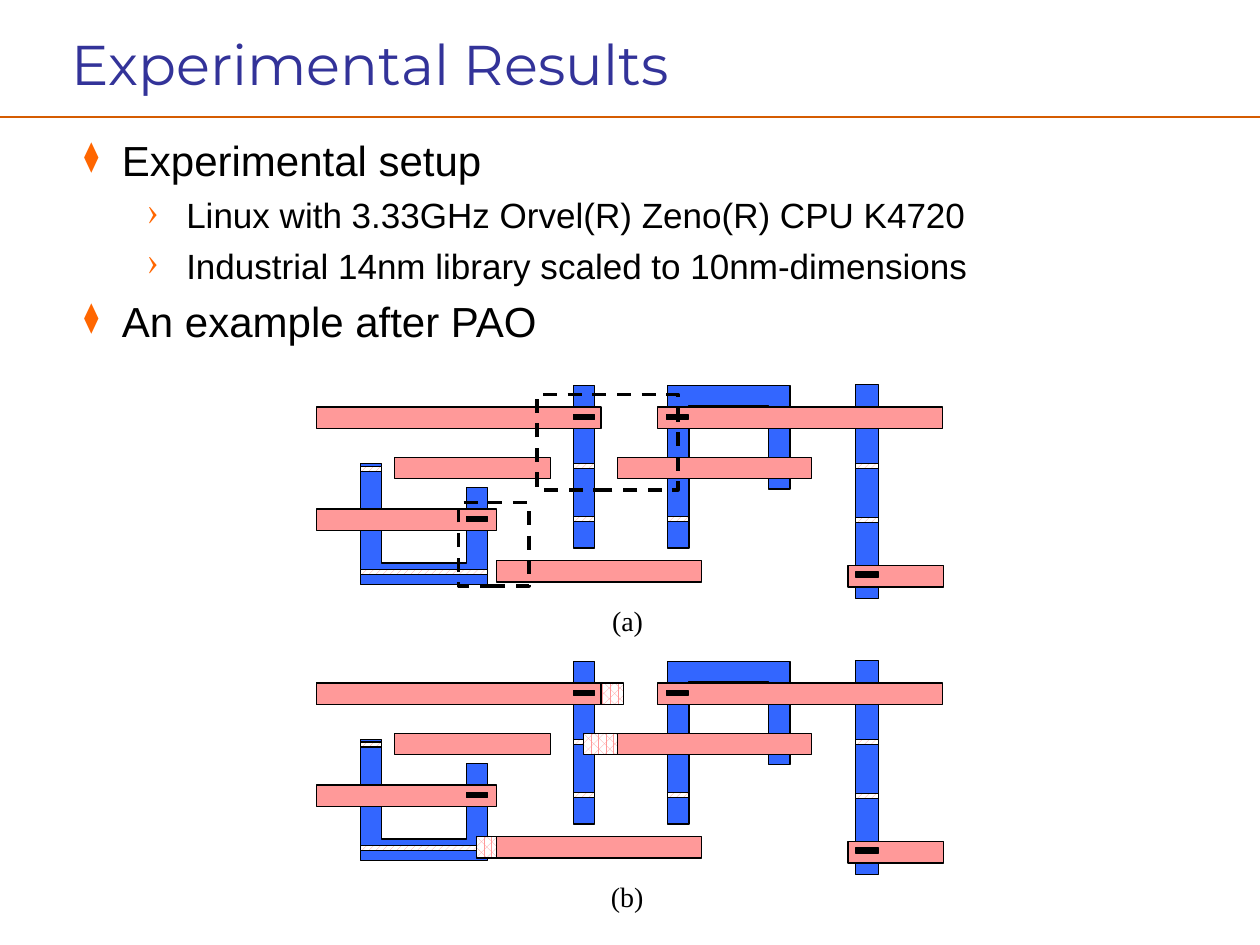
from dataclasses import dataclass

from lxml import etree
from pptx import Presentation
from pptx.dml.color import RGBColor
from pptx.enum.dml import MSO_LINE, MSO_PATTERN
from pptx.enum.shapes import MSO_CONNECTOR, MSO_SHAPE
from pptx.enum.text import MSO_ANCHOR, MSO_AUTO_SIZE
from pptx.oxml.ns import qn
from pptx.util import Inches, Pt

RECT = MSO_SHAPE.RECTANGLE
STRIPE = MSO_PATTERN.WIDE_UPWARD_DIAGONAL
DOTS = MSO_PATTERN.PERCENT_60
DASH = MSO_LINE.DASH
COLORS = {
    "title": "333399", "rule": "D55C01", "mark": "FF6600", "text": "000000",
    "wire": "3366FF", "bar": "FF9999", "pin": "000000", "back": "FFFFFF",
}


@dataclass
class Box:
    x: float
    y: float
    w: float
    h: float


@dataclass
class Item:
    text: str
    level: int = 0


@dataclass
class Style:
    size: int
    left: float
    hang: float
    mark: str
    scale: int


@dataclass
class Panel:
    label: str
    left: float
    drop: float
    grown: bool


STYLES = [Style(24, 0.43, 0.3, "⧫", 70), Style(20, 0.94, 0.31, "›", 100)]
ITEMS = [
    Item("Experimental setup"),
    Item("Linux with 3.33GHz Orvel(R) Zeno(R) CPU K4720", 1),
    Item("Industrial 14nm library scaled to 10nm-dimensions", 1),
    Item("An example after PAO"),
]
PANELS = [Panel("(a)", 4.76, 0, False), Panel("(b)", 4.75, 2.19, True)]

# Geometry of the first panel; the second one lies lower by its drop.
THICK, THIN = 0.17, 0.04
HOOK = [(5.3, 3.06), (6.27, 3.06), (6.27, 3.88), (6.1, 3.88),
        (6.1, 3.22), (5.47, 3.22), (5.47, 4.35), (5.3, 4.35)]
CUP = [(2.86, 3.68), (3.03, 3.68), (3.03, 4.47), (3.7, 4.47),
       (3.7, 3.87), (3.87, 3.87), (3.87, 4.64), (2.86, 4.64)]
POSTS = [Box(4.55, 3.06, THICK, 1.29), Box(6.79, 3.05, 0.18, 1.7)]
CUTS = [Box(x, y, w, THIN) for x, y, w in [
    (5.3, 4.1, THICK), (4.55, 3.68, THICK), (4.55, 4.1, THICK),
    (2.86, 4.52, 1.01), (2.86, 3.7, THICK), (6.79, 3.68, 0.18),
    (6.79, 4.11, 0.18)]]
GROWN = [Box(x, y, w, THICK) for x, y, w in [
    (3.78, 4.45, 1.78), (4.63, 3.63, 1.8), (2.51, 3.23, 2.44)]]
BARS = [Box(x, y, w, THICK) for x, y, w in [
    (2.51, 3.23, 2.26), (4.9, 3.63, 1.54), (3.13, 3.63, 1.24),
    (3.94, 4.45, 1.63), (5.22, 3.23, 2.26), (2.51, 4.04, 1.43),
    (6.73, 4.49, 0.76)]]
PINS = [Box(x, y, w, THIN) for x, y, w in [
    (4.55, 3.29, THICK), (5.29, 3.29, THICK), (3.7, 4.1, THICK),
    (6.79, 4.54, 0.18)]]
ZONES = [Box(4.26, 3.13, 1.12, 0.76), Box(3.64, 3.99, 0.56, 0.66)]


def color(name: str) -> RGBColor:
    return RGBColor.from_string(COLORS[name])


def paint(shape, name: str, pattern=None) -> None:
    """Fill a shape, plain or patterned, and give it a thin dark edge."""
    shape.shadow.inherit = False
    fill = shape.fill
    if pattern is None:
        fill.solid()
    else:
        fill.patterned()
        fill.pattern = pattern
        fill.back_color.rgb = color("back")
    fill.fore_color.rgb = color(name)
    shape.line.color.rgb = color("text")
    shape.line.width = Pt(0.75)


def add_rect(shapes, box: Box, drop: float):
    return shapes.add_shape(RECT, Inches(box.x), Inches(box.y + drop),
                            Inches(box.w), Inches(box.h))


def add_rects(shapes, boxes: list[Box], drop: float, name: str,
              pattern=None) -> None:
    for box in boxes:
        paint(add_rect(shapes, box, drop), name, pattern)


def add_outline(shapes, points: list[tuple[float, float]], drop: float) -> None:
    spots = [(Inches(x), Inches(y + drop)) for x, y in points]
    form = shapes.build_freeform(*spots[0])
    form.add_line_segments(spots[1:], close=True)
    paint(form.convert_to_shape(), "wire")


def add_zone(shapes, box: Box, drop: float) -> None:
    """Frame a conflict area with a dashed, unfilled box."""
    zone = add_rect(shapes, box, drop)
    zone.shadow.inherit = False
    zone.fill.background()
    zone.line.color.rgb = color("text")
    zone.line.width = Pt(2)
    zone.line.dash_style = DASH


def set_font(part, size: int, face: str, name: str) -> None:
    part.font.size = Pt(size)
    part.font.name = face
    part.font.color.rgb = color(name)


def add_text(shapes, box: Box, wrap: bool = True):
    frame = shapes.add_textbox(Inches(box.x), Inches(box.y),
                               Inches(box.w), Inches(box.h)).text_frame
    frame.word_wrap = wrap
    return frame


def add_mark(para, style: Style) -> None:
    """Give a paragraph its bullet and hanging indent."""
    props = para._p.get_or_add_pPr()
    props.set("marL", str(Inches(style.left)))
    props.set("indent", str(-Inches(style.hang)))
    tint = etree.SubElement(props, qn("a:buClr"))
    etree.SubElement(tint, qn("a:srgbClr"), val=COLORS["mark"])
    etree.SubElement(props, qn("a:buSzPct"), val=str(style.scale * 1000))
    etree.SubElement(props, qn("a:buChar"), char=style.mark)


def add_list(shapes) -> None:
    frame = add_text(shapes, Box(0.44, 1.02, 9.16, 5.84))
    frame.text = "\n".join(item.text for item in ITEMS)
    for i, (para, item) in enumerate(zip(frame.paragraphs, ITEMS)):
        style = STYLES[item.level]
        para.level = item.level
        add_mark(para, style)
        para.space_before = Pt(5 if i else 0)
        set_font(para.runs[0], style.size, "Arial", "text")


def add_head(shapes) -> None:
    rule = shapes.add_connector(MSO_CONNECTOR.STRAIGHT, 0, Inches(0.93),
                                Inches(10), Inches(0.93))
    rule.line.color.rgb = color("rule")
    rule.line.width = Pt(1)
    etree.SubElement(rule._element.spPr, qn("a:effectLst"))
    frame = add_text(shapes, Box(0.47, 0.11, 9.05, 0.78))
    frame.vertical_anchor = MSO_ANCHOR.MIDDLE
    frame.text = "Experimental Results"
    set_font(frame.paragraphs[0].runs[0], 32, "Montserrat", "title")


def add_panel(slide, panel: Panel) -> None:
    shapes, drop = slide.shapes.add_group_shape().shapes, panel.drop
    for points in (HOOK, CUP):
        add_outline(shapes, points, drop)
    add_rects(shapes, POSTS, drop, "wire")
    add_rects(shapes, CUTS, drop, "bar", STRIPE)
    if panel.grown:
        add_rects(shapes, GROWN, drop, "bar", DOTS)
    add_rects(shapes, BARS, drop, "bar")
    add_rects(shapes, PINS, drop, "pin")
    if not panel.grown:
        for box in ZONES:
            add_zone(shapes, box, drop)
    frame = add_text(shapes, Box(panel.left, 4.74 + drop, 0.5, 0.35), False)
    frame.auto_size = MSO_AUTO_SIZE.SHAPE_TO_FIT_TEXT
    frame.text = panel.label
    set_font(frame.paragraphs[0].runs[0], 16, "Times New Roman", "text")


def main() -> None:
    deck = Presentation()
    deck.slide_width, deck.slide_height = Inches(10), Inches(7.5)
    slide = deck.slides.add_slide(deck.slide_layouts[6])
    add_head(slide.shapes)
    add_list(slide.shapes)
    for panel in PANELS:
        add_panel(slide, panel)
    deck.save("out.pptx")


if __name__ == "__main__":
    main()
